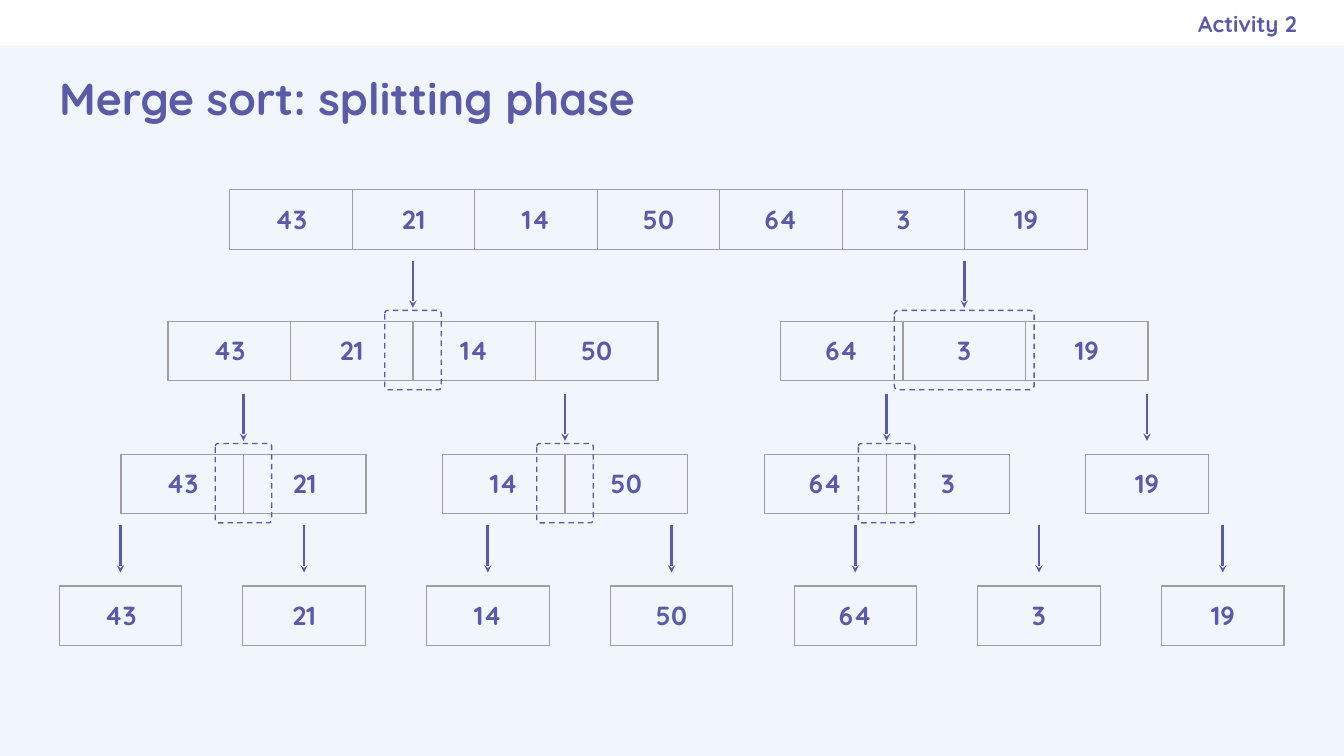
from dataclasses import dataclass

from lxml.etree import SubElement
from pptx import Presentation
from pptx.dml.color import RGBColor as RGB
from pptx.enum.dml import MSO_LINE
from pptx.enum.shapes import MSO_CONNECTOR, MSO_SHAPE as SHAPE
from pptx.enum.text import MSO_ANCHOR as ANCHOR, MSO_AUTO_SIZE, PP_ALIGN as ALIGN
from pptx.oxml.ns import qn
from pptx.util import Inches, Pt


@dataclass(frozen=True)
class Theme:
    font: str = "Quicksand"
    ink: RGB = RGB(0x5B, 0x5B, 0xA5)
    background: RGB = RGB(0xF1, 0xF5, 0xFC)
    bar: RGB = RGB(0xFF, 0xFF, 0xFF)
    border: RGB = RGB(0x9E, 0x9E, 0x9E)
    title_size: int = 24
    label_size: int = 12
    cell_size: int = 14


SLIDE_W = 10
SLIDE_H = SLIDE_W * 9 / 16
CELL_W, CELL_H = 6.38 / 7, 0.42
MARKER_H, MARKER_RISE = 0.59, 0.08

# Top, left and gap of each level, then its groups of values
LEVELS = [
    (1.41, 1.71, 0, [[43, 21, 14, 50, 64, 3, 19]]),
    (2.39, 1.25, CELL_W, [[43, 21, 14, 50], [64, 3, 19]]),
    (3.38, 0.9, 0.57, [[43, 21], [14, 50], [64, 3], [19]]),
    (4.36, 0.44, CELL_W / 2, [[43], [21], [14], [50], [64], [3], [19]]),
]


def put_text(tf, text, *, font, size, color, align=ALIGN.LEFT):
    p = tf.paragraphs[0]
    p.alignment = align
    p.space_before = Pt(0)
    r = p.add_run()
    r.text = text
    r.font.name = font
    r.font.size = Pt(size)
    r.font.bold = True
    r.font.color.rgb = color


def inches(*lengths):
    return [Inches(length) for length in lengths]


class SlideBuilder:
    def __init__(self, slide, theme):
        self.slide, self.theme = slide, theme
        self.shapes = slide.shapes
        fill = slide.background.fill
        fill.solid()
        fill.fore_color.rgb = theme.background

    def text(self, tf, text, size, align=ALIGN.LEFT):
        put_text(tf, text, font=self.theme.font, size=size,
                 color=self.theme.ink, align=align)

    def placeholder(self, sp, text, box, size, align=ALIGN.LEFT, right_inset=0.1):
        sp.left, sp.top, sp.width, sp.height = inches(*box)
        tf = sp.text_frame
        tf.auto_size = MSO_AUTO_SIZE.NONE
        tf.vertical_anchor = ANCHOR.MIDDLE
        tf.margin_left = tf.margin_top = tf.margin_bottom = Inches(0.1)
        tf.margin_right = Inches(right_inset)
        self.text(tf, text, size, align)

    def top_bar(self, width, height):
        """Add the header bar behind the placeholders."""
        sp = self.shapes.add_shape(SHAPE.RECTANGLE, *inches(0, 0, width, height))
        sp.shadow.inherit = False
        sp.fill.solid()
        sp.fill.fore_color.rgb = self.theme.bar
        sp.line.fill.background()
        self.shapes._spTree.insert(2, sp._element)

    def array(self, left, top, values):
        frame = self.shapes.add_table(
            1, len(values), *inches(left, top, CELL_W * len(values), CELL_H))
        table = frame.table
        table.first_row = table.horz_banding = False
        table.rows[0].height = Inches(CELL_H)
        for column, cell, value in zip(table.columns, table.rows[0].cells, values):
            column.width = Inches(CELL_W)
            cell.margin_left = cell.margin_right = Inches(0.1)
            cell.margin_top = cell.margin_bottom = Inches(0.1)
            self.borders(cell)
            cell.fill.background()
            self.text(cell.text_frame, str(value), self.theme.cell_size, ALIGN.CENTER)

    def borders(self, cell):
        tc_pr = cell._tc.get_or_add_tcPr()
        for side in ("a:lnL", "a:lnR", "a:lnT", "a:lnB"):
            ln = SubElement(tc_pr, qn(side), w=str(Pt(0.75)))
            fill = SubElement(ln, qn("a:solidFill"))
            SubElement(fill, qn("a:srgbClr"), val=str(self.theme.border))

    def arrow(self, x, top, bottom):
        line = self.shapes.add_connector(
            MSO_CONNECTOR.STRAIGHT, *inches(x, top, x, bottom))
        line.line.color.rgb = self.theme.ink
        line.line.width = Pt(1.5)
        SubElement(line.line._get_or_add_ln(), qn("a:tailEnd"),
                   type="stealth", w="sm", len="sm")
        SubElement(line._element.spPr, qn("a:effectLst"))

    def split_marker(self, center, top, width):
        sp = self.shapes.add_shape(
            SHAPE.ROUNDED_RECTANGLE,
            *inches(center - width / 2, top, width, MARKER_H))
        sp.adjustments[0] = 0.05
        sp.shadow.inherit = False
        sp.fill.background()
        sp.line.color.rgb = self.theme.ink
        sp.line.width = Pt(0.75)
        sp.line.dash_style = MSO_LINE.DASH


def main():
    prs = Presentation()
    prs.slide_width, prs.slide_height = inches(SLIDE_W, SLIDE_H)
    slide = prs.slides.add_slide(prs.slide_layouts[0])
    theme = Theme()
    builder = SlideBuilder(slide, theme)

    builder.top_bar(SLIDE_W, 0.34)
    builder.placeholder(slide.shapes.title, "Merge sort: splitting phase",
                        (0.34, 0.34, 9.32, 0.77), theme.title_size)
    builder.placeholder(slide.placeholders[1], "Activity 2", (5.75, 0, 3.9, 0.35),
                        theme.label_size, ALIGN.RIGHT, right_inset=0)

    for depth, (top, left, gap, groups) in enumerate(LEVELS):
        for values in groups:
            width = CELL_W * len(values)
            center = left + width / 2
            builder.array(left, top, values)
            if depth > 0:
                builder.arrow(center, top - 0.45, top - 0.1)
                if len(values) > 1:
                    # An odd group is marked around its whole middle cell
                    marker_w = 1.04 if len(values) % 2 else 0.42
                    builder.split_marker(center, top - MARKER_RISE, marker_w)
            left += width + gap

    prs.save("out.pptx")


if __name__ == "__main__":
    main()
